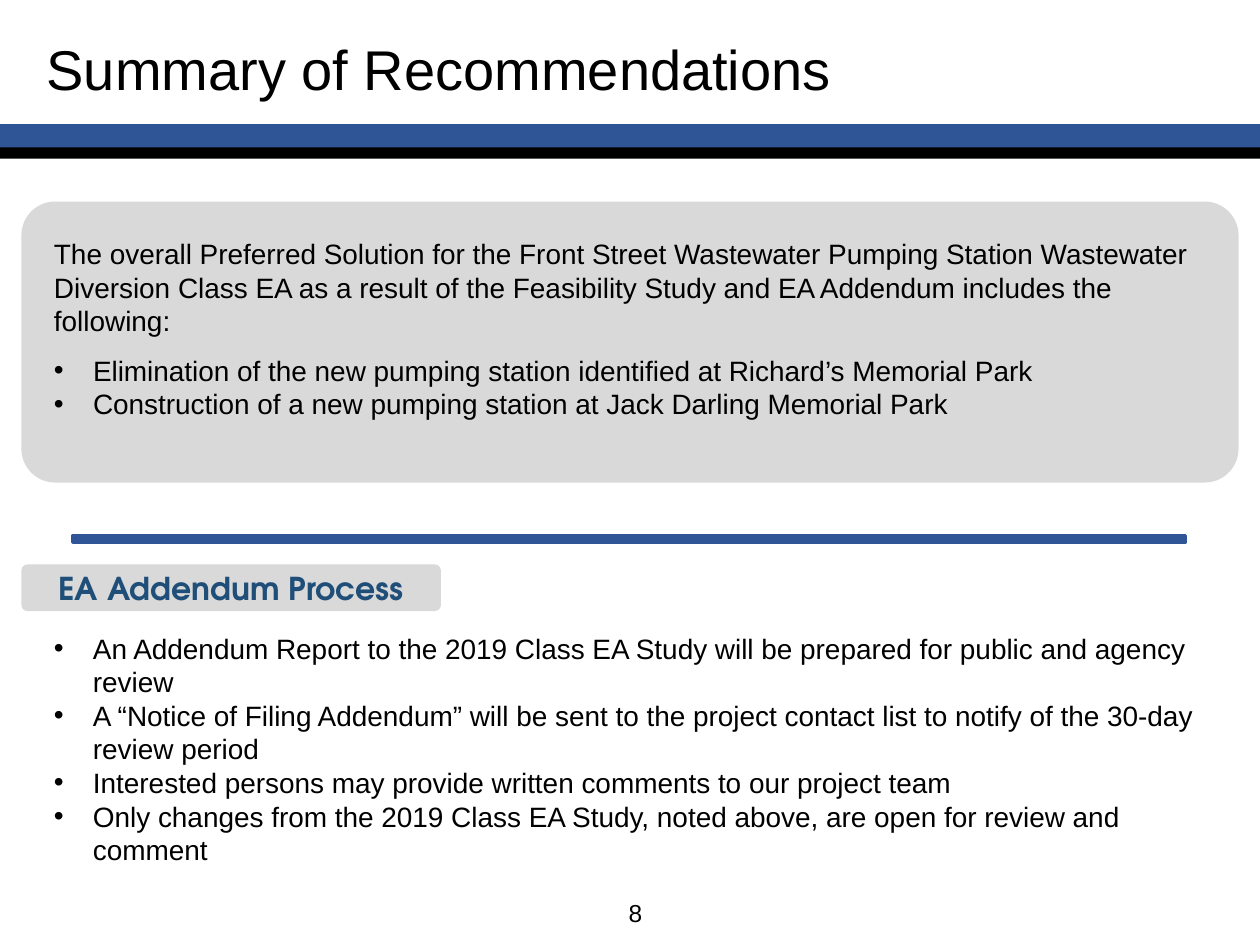
from lxml.etree import SubElement
from pptx import Presentation
from pptx.dml.color import RGBColor
from pptx.enum.shapes import MSO_SHAPE
from pptx.enum.text import MSO_ANCHOR, PP_ALIGN
from pptx.oxml.ns import qn
from pptx.util import Inches, Pt

BLUE, BLACK, GRAY, NAVY = "2F5597", "000000", "D9D9D9", "1F4E79"

INTRO = (
    "The overall Preferred Solution for the Front Street Wastewater Pumping Station "
    "Wastewater Diversion Class EA as a result of the Feasibility Study and EA Addendum "
    "includes the following:"
)
SOLUTIONS = [
    "Elimination of the new pumping station identified at Richard’s Memorial Park",
    "Construction of a new pumping station at Jack Darling Memorial Park",
]
PROCESS_STEPS = [
    "An Addendum Report to the 2019 Class EA Study will be prepared for public and agency review",
    "A “Notice of Filing Addendum” will be sent to the project contact list to notify of the "
    "30-day review period",
    "Interested persons may provide written comments to our project team",
    "Only changes from the 2019 Class EA Study, noted above, are open for review and comment",
]


def color(value):
    return RGBColor.from_string(value)


class SlideBuilder:
    """Adds consistently styled elements to one slide."""

    font = "Arial"
    body_size = 16
    indent = 0.31

    def __init__(self, page):
        self.page = page

    def place(self, item, left, top, width, height):
        item.left, item.top = Inches(left), Inches(top)
        item.width, item.height = Inches(width), Inches(height)

    def add_text(self, para, text, size=body_size, font=font, fill=BLACK, bold=False):
        span = para.add_run()
        span.text = text
        span.font.size, span.font.name, span.font.bold = Pt(size), font, bold
        span.font.color.rgb = color(fill)

    def title(self, text, *bounds):
        box = self.page.shapes.title
        self.place(box, *bounds)
        box.text_frame.vertical_anchor = MSO_ANCHOR.MIDDLE
        para = box.text_frame.paragraphs[0]
        para.alignment = PP_ALIGN.LEFT
        self.add_text(para, text, size=32)

    def block(self, bounds, fill, line=None, corner=None):
        kind = MSO_SHAPE.RECTANGLE if corner is None else MSO_SHAPE.ROUNDED_RECTANGLE
        shape = self.page.shapes.add_shape(kind, *map(Inches, bounds))
        shape.shadow.inherit = False
        shape.fill.solid()
        shape.fill.fore_color.rgb = color(fill)
        if corner is not None:
            shape.adjustments[0] = corner
        if line:
            shape.line.color.rgb = color(line)
            shape.line.width = Pt(2)
        else:
            shape.line.fill.background()
        return shape

    def heading(self, text, bounds):
        frame = self.block(bounds, GRAY, corner=0.13).text_frame
        frame.vertical_anchor = MSO_ANCHOR.MIDDLE
        para = frame.paragraphs[0]
        para.alignment = PP_ALIGN.CENTER
        self.add_text(para, text, size=18, font="TeX Gyre Adventor", fill=NAVY, bold=True)

    def text_box(self, *bounds, wrap=True):
        box = self.page.shapes.add_textbox(*map(Inches, bounds))
        box.text_frame.word_wrap = wrap
        return box.text_frame

    def bullet(self, para, text):
        properties = para._p.get_or_add_pPr()
        properties.set("marL", str(Inches(self.indent)))
        properties.set("indent", str(-Inches(self.indent)))
        SubElement(properties, qn("a:buFont"), typeface=self.font)
        SubElement(properties, qn("a:buChar"), char="•")
        self.add_text(para, text)

    def bullets(self, frame, items):
        for item in items:
            first = frame.paragraphs[0]
            self.bullet(frame.add_paragraph() if first.runs else first, item)


def main():
    deck = Presentation()
    deck.slide_width, deck.slide_height = Inches(10), Inches(7.5)
    page = deck.slides.add_slide(deck.slide_layouts[5])
    builder = SlideBuilder(page)

    builder.block((0, 1, 10, 0.2), BLUE, line=BLUE)
    builder.block((0, 1.17, 10, 0.09), BLACK)
    builder.title("Summary of Recommendations", 0.27, 0.16, 9, 0.76)

    builder.block((0.17, 1.6, 9.66, 2.23), GRAY, corner=0.12)
    solution = builder.text_box(0.33, 1.83, 9.42, 1.58)
    builder.add_text(solution.paragraphs[0], INTRO)
    builder.bullets(solution, SOLUTIONS)
    solution.paragraphs[1].space_before = Pt(9)

    builder.block((0.58, 4.25, 8.83, 0.05), BLUE, line=BLUE, corner=0)
    builder.heading("EA Addendum Process", (0.17, 4.48, 3.33, 0.37))
    builder.bullets(builder.text_box(0.33, 4.96, 9.33, 1.99), PROCESS_STEPS)

    number = builder.text_box(4.89, 7.08, 0.31, 0.34, wrap=False)
    builder.add_text(number.paragraphs[0], "8", size=14)

    deck.save("out.pptx")


if __name__ == "__main__":
    main()
